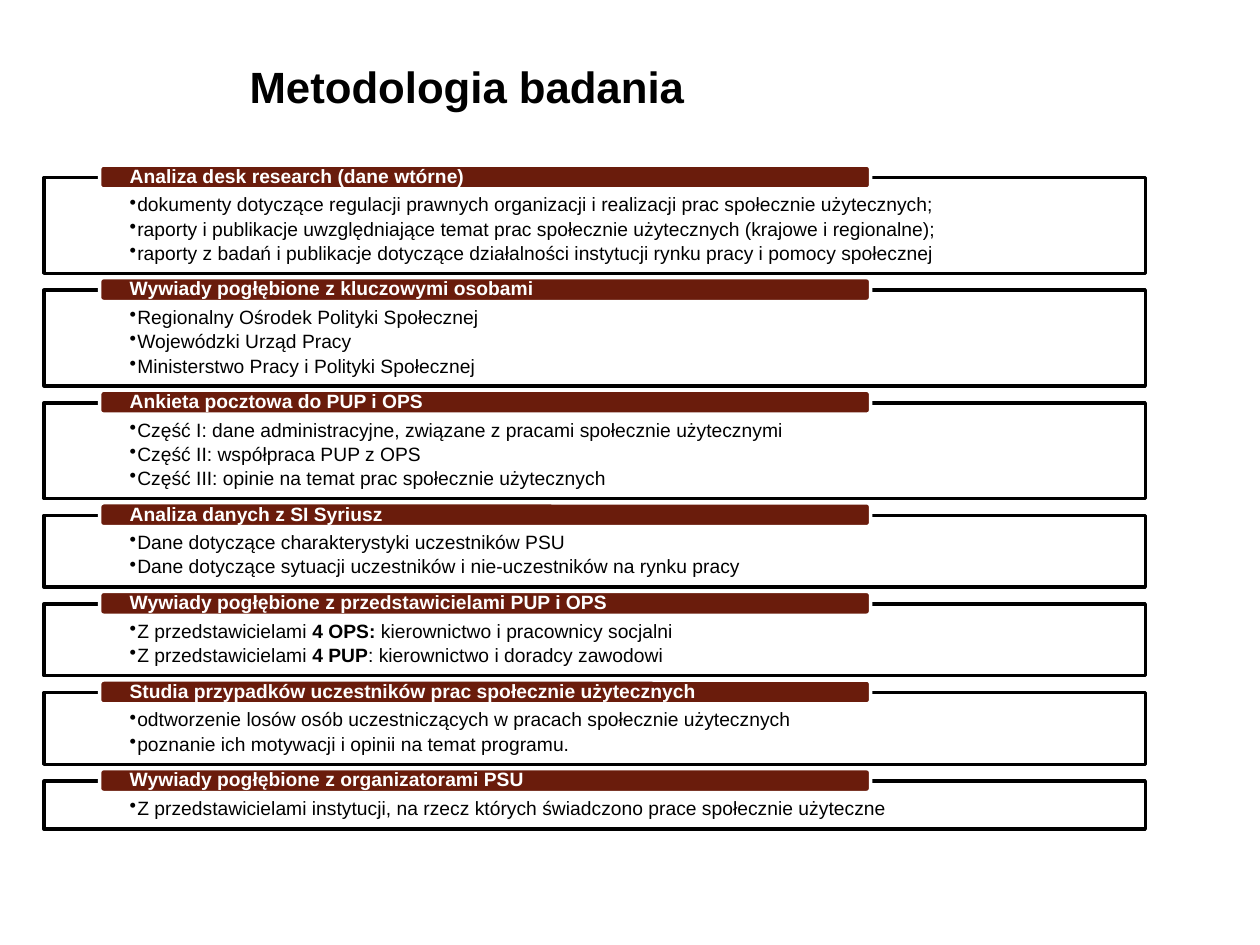
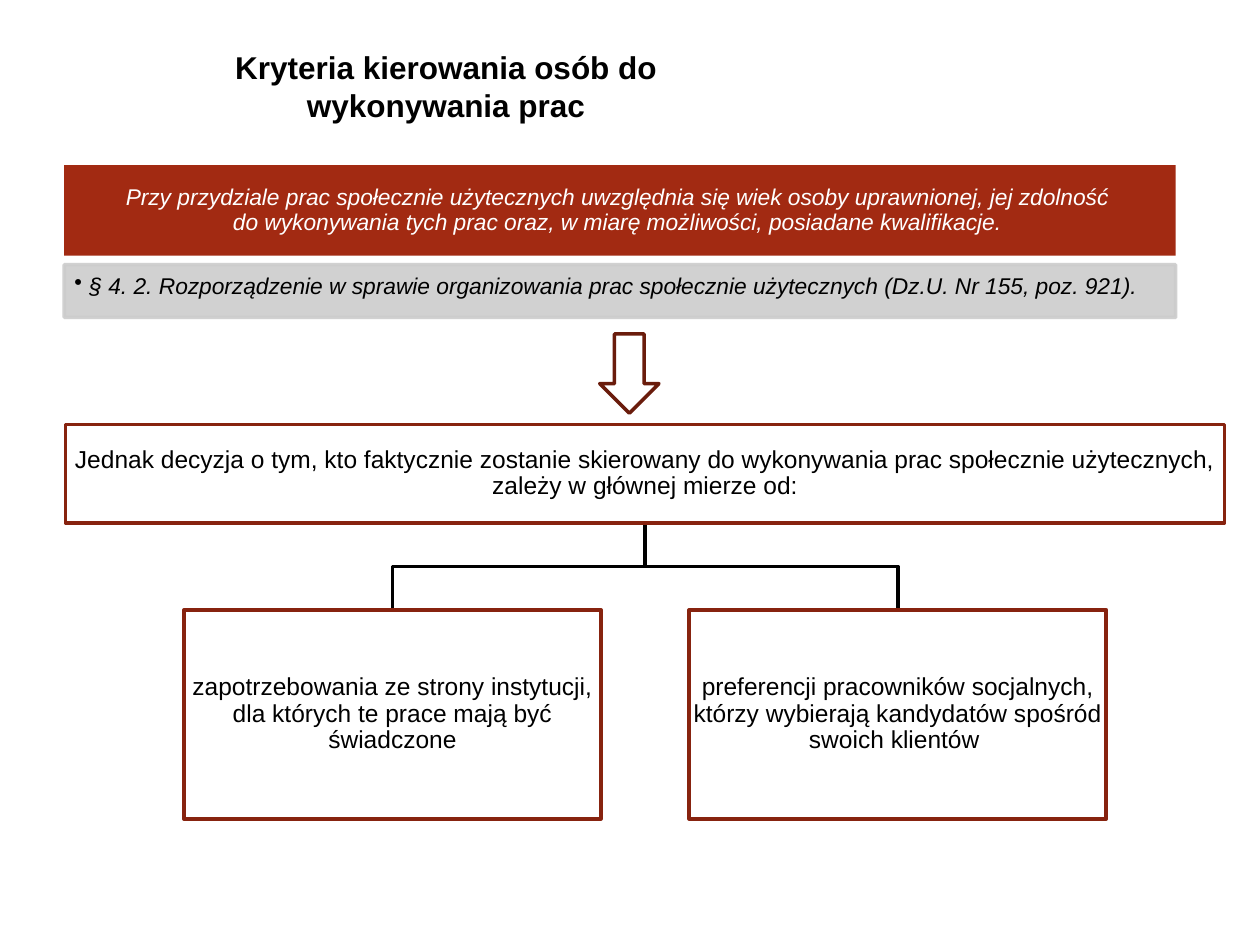
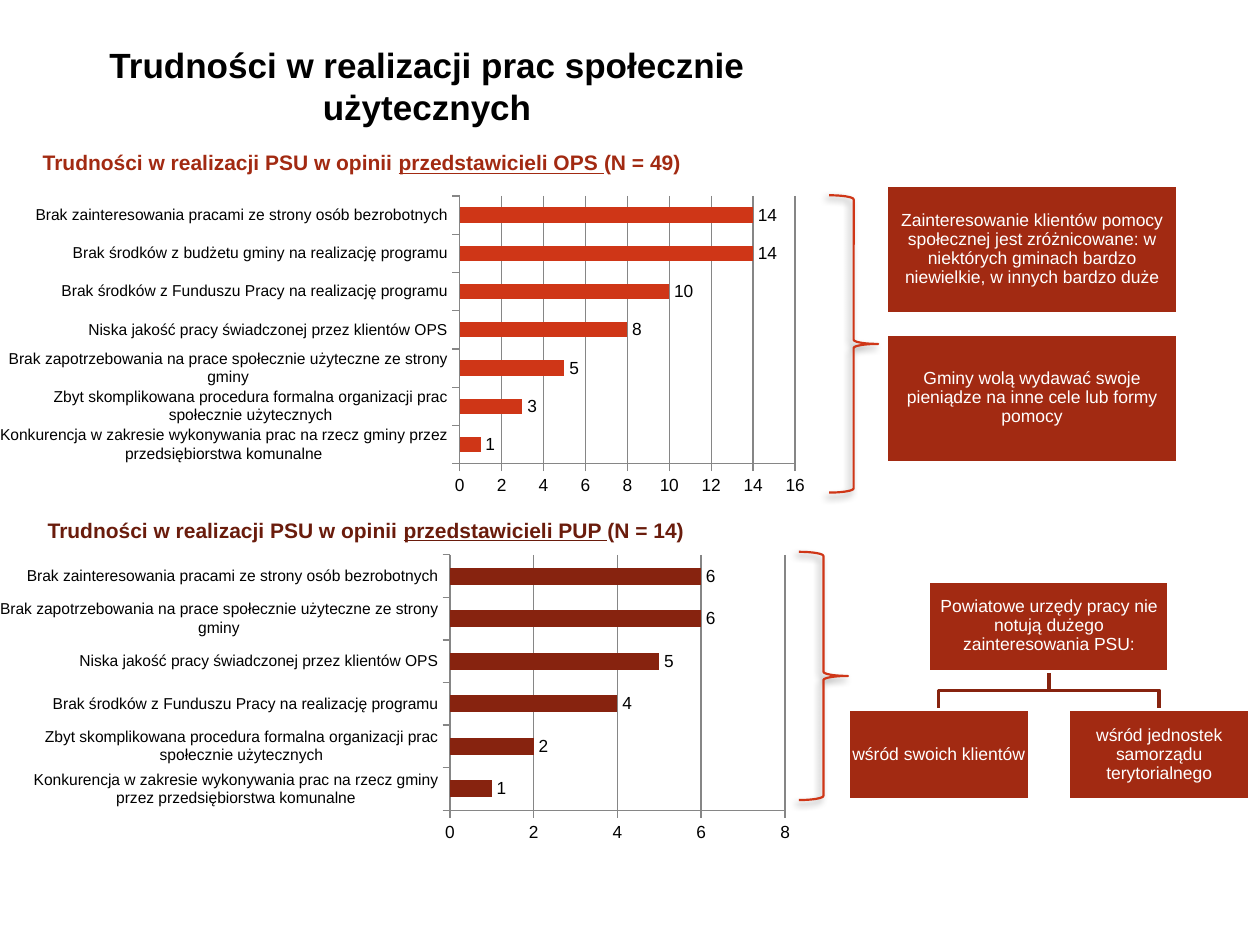
from lxml.etree import SubElement
from pptx import Presentation
from pptx.chart.data import CategoryChartData
from pptx.dml.color import RGBColor
from pptx.enum.chart import XL_CHART_TYPE, XL_LABEL_POSITION, XL_TICK_MARK
from pptx.enum.shapes import MSO_SHAPE
from pptx.enum.text import MSO_ANCHOR, MSO_AUTO_SIZE, PP_ALIGN
from pptx.oxml import parse_xml
from pptx.oxml.ns import nsdecls, qn
from pptx.util import Inches, Pt

COLORS = {
    "black": "000000",
    "white": "FFFFFF",
    "maroon": "6A1C0C",
    "brown": "87230F",
    "brick": "A22A12",
    "red": "CF3617",
    "gray": "CCCCCC",
    "axis": "868686",
}
FONT = "Arial"
TITLE_TOP, TITLE_HEIGHT = 0.36, 0.64


def rgb(name):
    return RGBColor.from_string(COLORS[name])


class SlideBuilder:
    """Holds the deck, its style and the slide being built."""

    def __init__(self):
        self.deck = Presentation()
        self.deck.slide_width, self.deck.slide_height = Inches(10), Inches(7.5)
        self.page = None

    def new_page(self, title, left, width, size):
        self.page = self.deck.slides.add_slide(self.deck.slide_layouts[5])
        box = self.page.shapes.title
        self.place(box, left, TITLE_TOP, width, TITLE_HEIGHT)
        self.fill_text(box.text_frame, [title], size, "black", bold=True)

    def place(self, box, left, top, width, height):
        box.left, box.top = Inches(left), Inches(top)
        box.width, box.height = Inches(width), Inches(height)

    def fill_text(self, frame, paragraphs, size, color, bold=False, italic=False,
                  align=PP_ALIGN.CENTER, anchor=MSO_ANCHOR.MIDDLE, insets=None,
                  spacing=1.0, after=0, bullet_indent=None):
        """A paragraph is a string or a list of strings and (text, font attribute) pairs."""
        frame.word_wrap = True
        frame.auto_size = MSO_AUTO_SIZE.NONE
        frame.vertical_anchor = anchor
        if insets:
            frame.margin_left, frame.margin_top, frame.margin_right, frame.margin_bottom = map(Inches, insets)
        for index, content in enumerate(paragraphs):
            para = frame.paragraphs[0] if index == 0 else frame.add_paragraph()
            para.alignment = align
            para.line_spacing = spacing
            para.space_before, para.space_after = Pt(0), Pt(after)
            if bullet_indent:
                self.bullet(para, bullet_indent)
            for part in [content] if isinstance(content, str) else content:
                text, emphasis = (part, None) if isinstance(part, str) else part
                for number, line in enumerate(text.split("\n")):
                    if number:
                        para.add_line_break()
                    span = para.add_run()
                    span.text = line
                    font = span.font
                    font.name, font.size = FONT, Pt(size)
                    font.bold = bold or emphasis == "bold"
                    font.italic = italic
                    font.underline = emphasis == "underline"
                    font.color.rgb = rgb(color)

    def bullet(self, para, indent):
        properties = para._p.get_or_add_pPr()
        properties.set("marL", str(Inches(indent)))
        properties.set("indent", str(-Inches(indent)))
        SubElement(properties, qn("a:buChar"), char="•")

    def style(self, box, fill=None, line=None, line_width=2):
        if fill:
            box.fill.solid()
            box.fill.fore_color.rgb = rgb(fill)
        else:
            box.fill.background()
        if line:
            box.line.color.rgb = rgb(line)
            box.line.width = Pt(line_width)
        else:
            box.line.fill.background()
        box.shadow.inherit = False

    def shape(self, kind, at, fill=None, line=None, line_width=2):
        box = self.page.shapes.add_shape(kind, *map(Inches, at))
        self.style(box, fill, line, line_width)
        return box

    def text_shape(self, at, paragraphs, size, color, fill=None, line=None,
                   kind=MSO_SHAPE.RECTANGLE, **text_style):
        box = self.shape(kind, at, fill, line)
        self.fill_text(box.text_frame, paragraphs, size, color, spacing=0.9, **text_style)
        return box

    def heading(self, at, content, color, anchor):
        box = self.page.shapes.add_textbox(*map(Inches, at))
        self.fill_text(box.text_frame, [content], 12, color, bold=True, align=PP_ALIGN.LEFT, anchor=anchor)

    def set_opacity(self, box, percent):
        for color in box._element.spPr.iter(qn("a:srgbClr")):
            SubElement(color, qn("a:alpha"), val=str(percent * 1000))

    def brace(self, at):
        box = self.shape(MSO_SHAPE.RIGHT_BRACE, at, line="red", line_width=1.25)
        effects = box._element.spPr.find(qn("a:effectLst"))
        shadow = SubElement(effects, qn("a:outerShdw"), blurRad=str(Pt(4)), dist=str(Pt(3)),
                            dir=str(135 * 60000), algn="tl", rotWithShape="0")
        color = SubElement(shadow, qn("a:srgbClr"), val=COLORS["black"])
        SubElement(color, qn("a:alpha"), val="40000")

    def tree(self, parent, children, size, color, branch_color, fill, line):
        """A parent box above its children; each is a place and a text."""
        (left, top, width, height), _ = parent
        start_x, start_y = left + width / 2, top + height
        for (child_left, child_top, child_width, _), _ in children:
            end_x, middle_y = child_left + child_width / 2, (start_y + child_top) / 2
            builder = self.page.shapes.build_freeform(Inches(start_x), Inches(start_y))
            corners = [(start_x, middle_y), (end_x, middle_y), (end_x, child_top)]
            builder.add_line_segments([(Inches(x), Inches(y)) for x, y in corners], close=False)
            self.style(builder.convert_to_shape(), line=branch_color)
        for at, text in [parent, *children]:
            self.text_shape(at, [text], size, color, fill, line, insets=[0.01] * 4)

    def bar_chart(self, at, rows, color, plot, maximum):
        data = CategoryChartData()
        data.categories = [name for name, _ in rows]
        data.add_series("Series 1", [value for _, value in rows])
        chart = self.page.shapes.add_chart(XL_CHART_TYPE.BAR_CLUSTERED, *map(Inches, at), data).chart
        chart.has_legend = chart.has_title = False
        chart.font.name, chart.font.size = FONT, Pt(10)
        chart.font.color.rgb = rgb("black")

        bars = chart.plots[0]
        bars.gap_width, bars.vary_by_categories = 150, False
        bars.series[0].format.fill.solid()
        bars.series[0].format.fill.fore_color.rgb = rgb(color)
        bars.has_data_labels = True
        bars.data_labels.show_value = True
        bars.data_labels.position = XL_LABEL_POSITION.OUTSIDE_END

        for axis in (chart.category_axis, chart.value_axis):
            axis.major_tick_mark, axis.minor_tick_mark = XL_TICK_MARK.OUTSIDE, XL_TICK_MARK.NONE
            axis.format.line.color.rgb = rgb("axis")
        chart.category_axis.tick_labels.font.size = Pt(9)
        values = chart.value_axis
        values.minimum_scale, values.maximum_scale, values.major_unit = 0, maximum, 2
        values.has_major_gridlines = True
        values.major_gridlines.format.line.color.rgb = rgb("axis")
        self.set_plot_area(chart, plot)

    def set_plot_area(self, chart, plot):
        area = chart._chartSpace.find(".//" + qn("c:plotArea"))
        for old in area.findall(qn("c:layout")):
            area.remove(old)
        modes = '<c:xMode val="edge"/><c:yMode val="edge"/>'
        sizes = "".join(f'<c:{key} val="{value}"/>' for key, value in zip("xywh", plot))
        area.insert(0, parse_xml(
            f'<c:layout {nsdecls("c")}><c:manualLayout><c:layoutTarget val="inner"/>'
            f"{modes}{sizes}</c:manualLayout></c:layout>"))


METHODS = [
    ("Analiza desk research (dane wtórne)", [
        "dokumenty dotyczące regulacji prawnych organizacji i realizacji prac społecznie użytecznych;",
        "raporty i publikacje uwzględniające temat prac społecznie użytecznych (krajowe i regionalne);",
        "raporty z badań i publikacje dotyczące działalności instytucji rynku pracy i pomocy społecznej"]),
    ("Wywiady pogłębione z kluczowymi osobami", [
        "Regionalny Ośrodek Polityki Społecznej",
        "Wojewódzki Urząd Pracy",
        "Ministerstwo Pracy i Polityki Społecznej"]),
    ("Ankieta pocztowa do PUP i OPS", [
        "Część I: dane administracyjne, związane z pracami społecznie użytecznymi",
        "Część II: współpraca PUP z OPS",
        "Część III: opinie na temat prac społecznie użytecznych"]),
    ("Analiza danych z SI Syriusz", [
        "Dane dotyczące charakterystyki uczestników PSU",
        "Dane dotyczące sytuacji uczestników i nie-uczestników na rynku pracy"]),
    ("Wywiady pogłębione z przedstawicielami PUP i OPS", [
        ["Z przedstawicielami ", ("4 OPS: ", "bold"), "kierownictwo i pracownicy socjalni"],
        ["Z przedstawicielami ", ("4 PUP", "bold"), ": kierownictwo i doradcy zawodowi"]]),
    ("Studia przypadków uczestników prac społecznie użytecznych", [
        "odtworzenie losów osób uczestniczących w pracach społecznie użytecznych",
        "poznanie ich motywacji i opinii na temat programu."]),
    ("Wywiady pogłębione z organizatorami PSU", [
        "Z przedstawicielami instytucji, na rzecz których świadczono prace społecznie użyteczne"]),
]

# Difficulties named by both kinds of offices
COMPETITION = "Konkurencja w zakresie wykonywania prac na rzecz gminy przez przedsiębiorstwa komunalne"
PROCEDURE = "Zbyt skomplikowana procedura formalna organizacji prac społecznie użytecznych"
NO_DEMAND = "Brak zapotrzebowania na prace społecznie użyteczne ze strony gminy"
LOW_QUALITY = "Niska jakość pracy świadczonej przez klientów OPS"
NO_FUND = "Brak środków z Funduszu Pracy na realizację programu"
NO_BUDGET = "Brak środków z budżetu gminy na realizację programu"
NO_INTEREST = "Brak zainteresowania pracami ze strony osób bezrobotnych"


def build_methodology(slides):
    slides.new_page("Metodologia badania", 0.75, 5.91, 25)
    line_height, first_top, last_bottom = 0.19, 1.41, 6.58
    heights = [line_height * (len(items) + 1) for _, items in METHODS]
    gap = (last_bottom - first_top - sum(heights)) / (len(METHODS) - 1)
    top = first_top
    for (label, items), height in zip(METHODS, heights):
        slides.text_shape((0.35, top, 8.74, height), items, 11, "black", line="black",
                          align=PP_ALIGN.LEFT, anchor=MSO_ANCHOR.TOP,
                          insets=(0.68, 0.14, 0.68, 0.09), after=2, bullet_indent=0.06)
        slides.text_shape((0.79, top - 0.1, 6.12, line_height), [label], 11, "white",
                          fill="maroon", line="white", kind=MSO_SHAPE.ROUNDED_RECTANGLE,
                          bold=True, align=PP_ALIGN.LEFT, insets=(0.23, 0, 0.23, 0))
        top += height + gap


def build_criteria(slides):
    slides.new_page("Kryteria kierowania osób do wykonywania prac", 0.98, 5.12, 18)

    # Regulation and its source
    slides.text_shape(
        (0.51, 1.31, 8.82, 0.72),
        ["Przy przydziale prac społecznie użytecznych uwzględnia się wiek osoby uprawnionej, jej zdolność \n"
         "do wykonywania tych prac oraz, w miarę możliwości, posiadane kwalifikacje. "],
        13, "white", fill="brick", italic=True, insets=(0.1, 0.06, 0.1, 0.06))
    source = slides.text_shape(
        (0.51, 2.1, 8.82, 0.42),
        ["§ 4. 2. Rozporządzenie w sprawie organizowania prac społecznie użytecznych (Dz.U. Nr 155, poz. 921)."],
        13, "black", fill="gray", line="gray", italic=True, align=PP_ALIGN.LEFT,
        anchor=MSO_ANCHOR.TOP, insets=(0.08, 0.08, 0.1, 0.11), bullet_indent=0.12)
    slides.set_opacity(source, 90)
    slides.shape(MSO_SHAPE.DOWN_ARROW, (4.76, 2.65, 0.47, 0.63), line="maroon")

    # Actual decision
    slides.tree(
        ((0.52, 3.37, 9.2, 0.78),
         "Jednak decyzja o tym, kto faktycznie zostanie skierowany do wykonywania prac społecznie użytecznych, "
         "zależy w głównej mierze od:"),
        [((1.46, 4.84, 3.31, 1.66),
          "zapotrzebowania ze strony instytucji, dla których te prace mają być świadczone"),
         ((5.47, 4.84, 3.31, 1.66),
          "preferencji pracowników socjalnych, którzy wybierają kandydatów spośród swoich klientów ")],
        14, "black", branch_color="black", fill=None, line="brown")


def build_difficulties(slides):
    slides.new_page("Trudności w realizacji prac społecznie użytecznych", 0.75, 5.28, 20)

    # Charts with their headings and braces
    slides.bar_chart(
        (0, 1.39, 6.57, 2.76),
        [(COMPETITION, 1), (PROCEDURE, 3), (NO_DEMAND, 5), (LOW_QUALITY, 8),
         (NO_FUND, 10), (NO_BUDGET, 14), (NO_INTEREST, 14)],
        "red", (0.55, 0.06, 0.41, 0.77), 16)
    slides.bar_chart(
        (0, 4.3, 6.42, 2.6),
        [(COMPETITION, 1), (PROCEDURE, 2), (NO_FUND, 4), (LOW_QUALITY, 5),
         (NO_DEMAND, 6), (NO_INTEREST, 6)],
        "brown", (0.55, 0.04, 0.42, 0.78), 8)
    for at, office, count, color, anchor in [
        ((0.24, 1.14, 5.31, 0.3), "OPS", 49, "brick", MSO_ANCHOR.MIDDLE),
        ((0.28, 4.06, 6.83, 0.3), "PUP", 14, "maroon", MSO_ANCHOR.TOP),
    ]:
        slides.heading(at, ["Trudności w realizacji PSU w opinii ",
                            (f"przedstawicieli {office} ", "underline"), f"(N = {count})"], color, anchor)
    slides.brace((6.58, 1.55, 0.39, 2.36))
    slides.brace((6.34, 4.38, 0.39, 1.97))

    # Comments beside the charts
    comments = ["Zainteresowanie klientów pomocy społecznej jest zróżnicowane: w niektórych gminach "
                "bardzo niewielkie, w innych bardzo duże",
                "Gminy wolą wydawać swoje pieniądze na inne cele lub formy pomocy"]
    for index, comment in enumerate(comments):
        slides.text_shape((7.03, 1.47 + 1.18 * index, 2.32, 1.02), [comment], 10, "white",
                          fill="brick", line="white", insets=[0.04] * 4)
    slides.tree(
        ((7.37, 4.61, 1.91, 0.72), "Powiatowe urzędy pracy nie notują dużego zainteresowania PSU:"),
        [((6.73, 5.63, 1.44, 0.72), "wśród swoich klientów"),
         ((8.48, 5.63, 1.44, 0.72), "wśród jednostek samorządu terytorialnego")],
        10, "white", branch_color="brown", fill="brick", line="white")


def main():
    slides = SlideBuilder()
    build_methodology(slides)
    build_criteria(slides)
    build_difficulties(slides)
    slides.deck.save("out.pptx")


if __name__ == "__main__":
    main()
